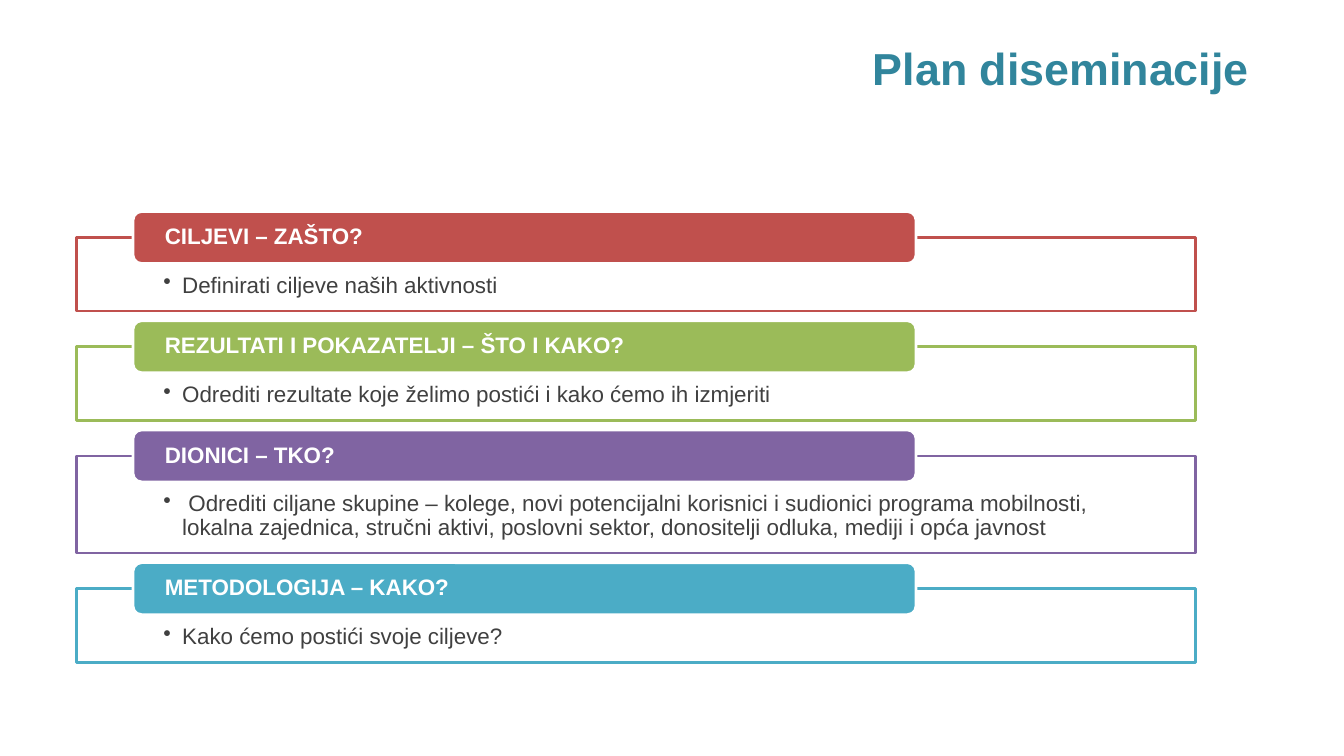
from lxml import etree
from pptx import Presentation
from pptx import util as u
from pptx.dml.color import RGBColor
from pptx.enum import shapes, text
from pptx.oxml.ns import qn

COLORS = {
    "title": "31859C", "text": "404040", "white": "FFFFFF",
    "red": "C0504D", "green": "9BBB59", "purple": "8064A2", "aqua": "4BACC6",
}

ROWS = [  # colour, heading, bullet, box height
    ("red", "CILJEVI – ZAŠTO?", "Definirati ciljeve naših aktivnosti", 52.5),
    ("green", "REZULTATI I POKAZATELJI – ŠTO I KAKO?",
     "Odrediti rezultate koje želimo postići i kako ćemo ih izmjeriti", 52.5),
    ("purple", "DIONICI – TKO?",
     " Odrediti ciljane skupine – kolege, novi potencijalni korisnici i sudionici "
     "programa mobilnosti, lokalna zajednica, stručni aktivi, poslovni sektor, "
     "donositelji odluka, mediji i opća javnost", 69.3),
    ("aqua", "METODOLOGIJA – KAKO?", "Kako ćemo postići svoje ciljeve?", 52.5),
]
TOP, GAP = 169.7, 25.5


class Deck:
    font = "Arial"

    def __init__(self, width, height):
        self.prs = Presentation()
        self.prs.slide_width, self.prs.slide_height = u.Pt(width), u.Pt(height)
        self.s = self.prs.slides.add_slide(self.prs.slide_layouts[5])

    def color(self, name):
        return RGBColor.from_string(COLORS[name])

    def label(self, sp, words, size, color, bold, anchor, insets):
        tf = sp.text_frame
        tf.word_wrap = True
        tf.auto_size = text.MSO_AUTO_SIZE.NONE
        tf.vertical_anchor = anchor
        tf.margin_left, tf.margin_top, tf.margin_right, tf.margin_bottom = map(u.Pt, insets)
        tf.text = words
        p = tf.paragraphs[0]
        p.alignment = text.PP_ALIGN.LEFT
        f = p.runs[0].font
        f.name, f.size, f.bold = self.font, u.Pt(size), bold
        f.color.rgb = self.color(color)
        return p

    def title(self, words, x, y, w, h):
        sp = self.s.shapes.title
        sp.left, sp.top, sp.width, sp.height = map(u.Pt, (x, y, w, h))
        self.label(sp, words, 32, "title", True, text.MSO_ANCHOR.MIDDLE, (7.2, 3.6, 7.2, 3.6))

    def shape(self, kind, x, y, w, h, fill, line):
        sp = self.s.shapes.add_shape(kind, *map(u.Pt, (x, y, w, h)))
        sp.shadow.inherit = False
        sp.fill.solid()
        sp.fill.fore_color.rgb = self.color(fill)
        sp.line.color.rgb = self.color(line)
        sp.line.width = u.Pt(2)
        return sp

    def bullet_box(self, words, y, h, color):
        sp = self.shape(shapes.MSO_SHAPE.RECTANGLE, 54.7, y, 799.2, h, "white", color)
        fill = sp._element.spPr.find(qn("a:solidFill")).find(qn("a:srgbClr"))
        etree.SubElement(fill, qn("a:alpha"), val="90000")
        p = self.label(sp, words, 16, "text", False, text.MSO_ANCHOR.TOP, (62, 26, 62, 8.6))
        p.line_spacing = 0.9
        pPr = p._p.get_or_add_pPr()
        pPr.set("marL", str(u.Pt(13.5)))
        pPr.set("indent", str(-u.Pt(13.5)))
        etree.SubElement(pPr, qn("a:buChar"), char="•")

    def heading(self, words, y, color):
        sp = self.shape(shapes.MSO_SHAPE.ROUNDED_RECTANGLE, 95, y, 559.4, 37.2, color, "white")
        p = self.label(sp, words, 16, "white", True, text.MSO_ANCHOR.MIDDLE, (21, 0, 21, 0))
        p.line_spacing = 0.9


def main():
    deck = Deck(960, 540)

    # Title
    deck.title("Plan diseminacije", 616.3, 26, 289.5, 44)

    # Boxes, each with a heading over its top edge
    y = TOP
    for color, head, bullet, h in ROWS:
        deck.bullet_box(bullet, y, h, color)
        deck.heading(head, y - 18.6, color)
        y += h + GAP

    deck.prs.save("out.pptx")


if __name__ == "__main__":
    main()
